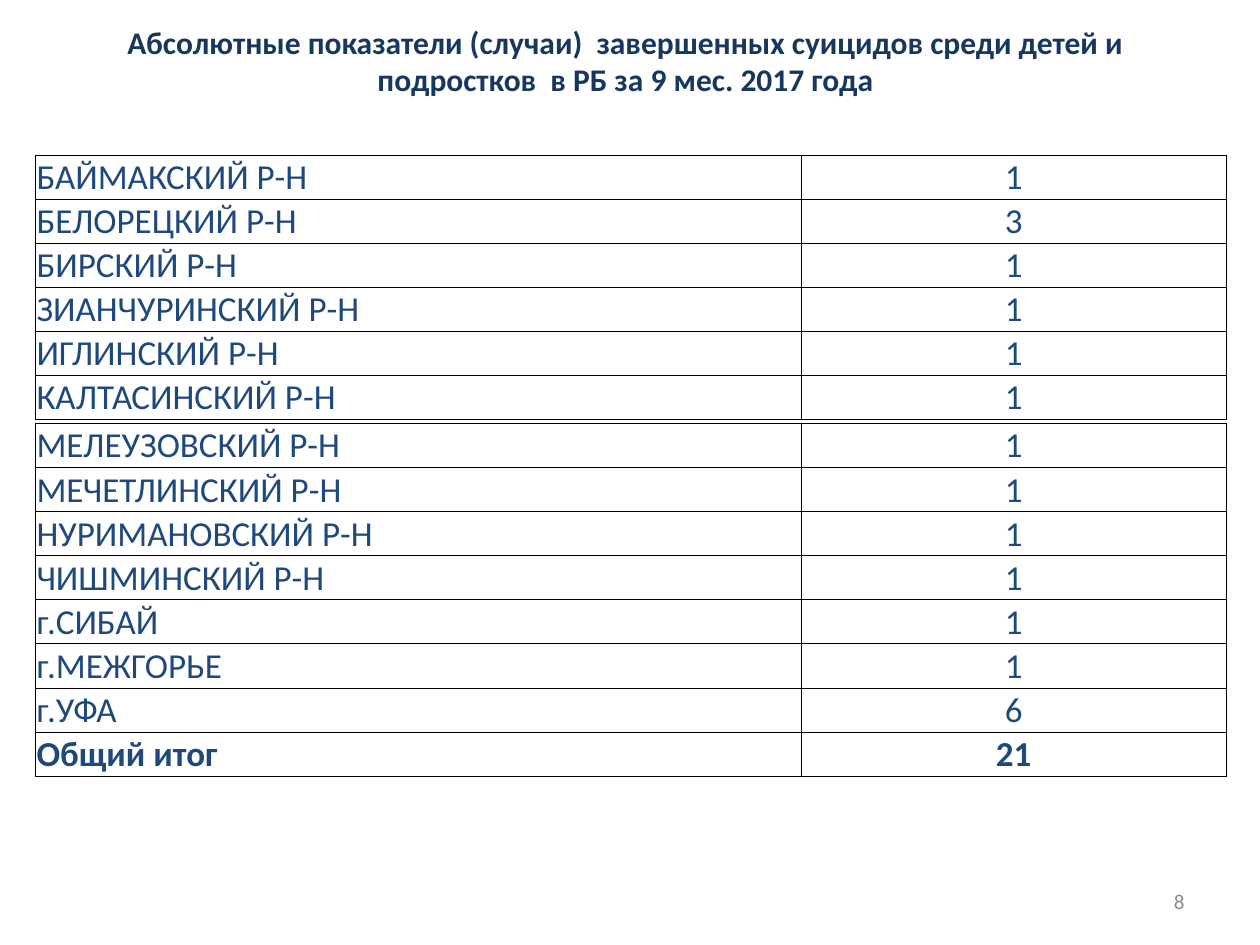
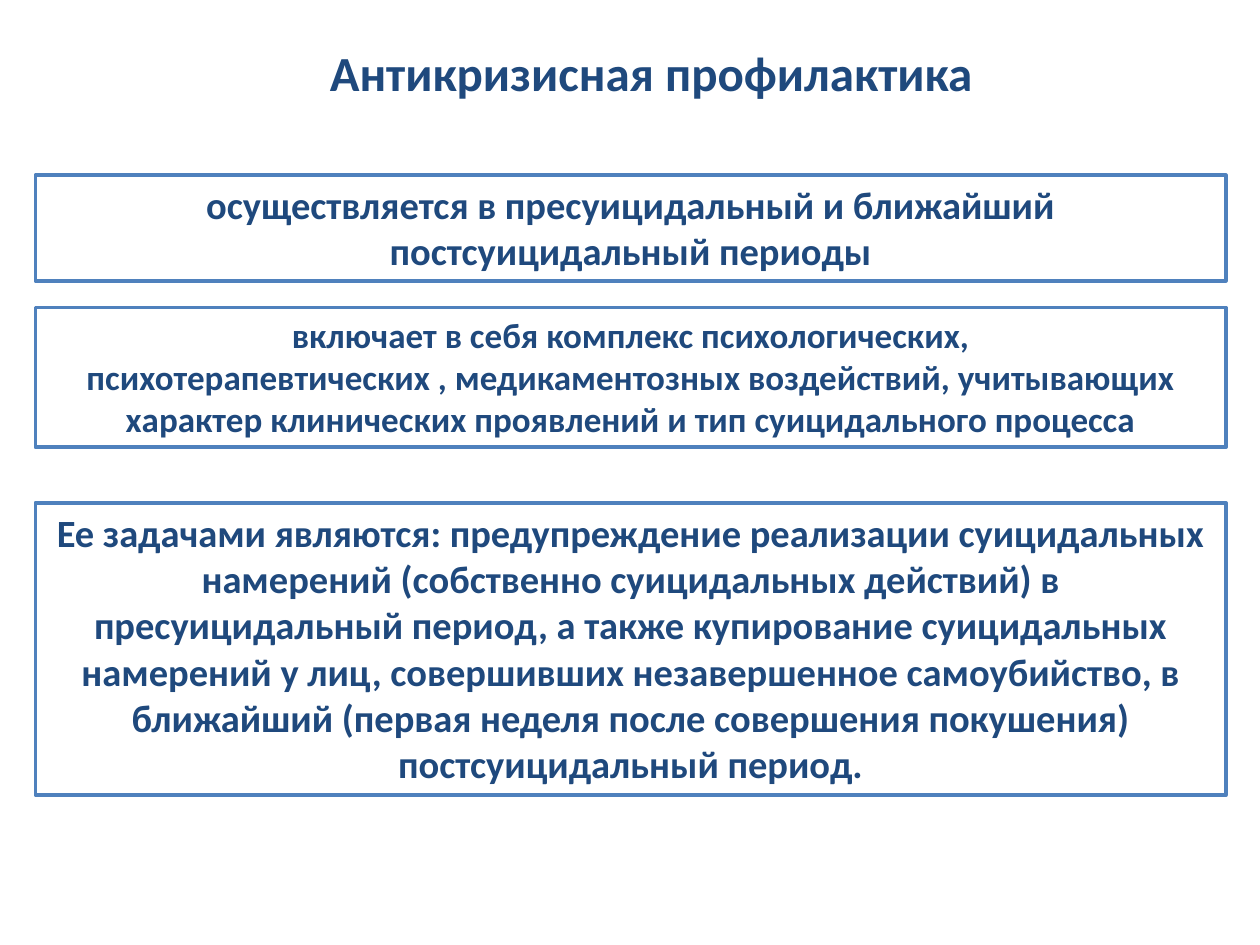
from lxml import etree
from pptx import Presentation
from pptx.dml.color import RGBColor
from pptx.enum.shapes import MSO_SHAPE
from pptx.enum.text import MSO_ANCHOR, PP_ALIGN
from pptx.oxml.ns import qn
from pptx.util import Inches, Pt

LEFT, CENTER, RIGHT = PP_ALIGN.LEFT, PP_ALIGN.CENTER, PP_ALIGN.RIGHT
TOP, MIDDLE, BOTTOM = MSO_ANCHOR.TOP, MSO_ANCHOR.MIDDLE, MSO_ANCHOR.BOTTOM
RECTANGLE = MSO_SHAPE.RECTANGLE

COLORS = {
    "text": "1F497D",
    "heading": "17375E",
    "number": "8C8C8C",
    "frame": "4F81BD",
    "border": "000000",
    "white": "FFFFFF",
}
CONTENT_LEFT, CONTENT_WIDTH = 0.28, 9.45
COLUMN_WIDTHS = [6.08, 3.37]
ROW_HEIGHT = 0.35


def write_text(text_frame, lines, size, color="text", bold=True, align=CENTER):
    text_frame.word_wrap = True
    for index, line in enumerate(lines):
        paragraph = text_frame.paragraphs[0] if index == 0 else text_frame.add_paragraph()
        paragraph.alignment = align
        run = paragraph.add_run()
        run.text = line
        font_format = {"name": "Calibri", "size": Pt(size), "bold": bold}
        for attribute, value in font_format.items():
            setattr(run.font, attribute, value)
        run.font.color.rgb = RGBColor.from_string(COLORS[color])


def add_text(slide, box, text, size, color="text", bold=True, align=CENTER, anchor=TOP):
    shape = slide.shapes.add_textbox(*map(Inches, box))
    shape.text_frame.vertical_anchor = anchor
    write_text(shape.text_frame, [text], size, color, bold, align)


presentation = Presentation()
presentation.slide_width = Inches(10)
presentation.slide_height = Inches(7.5)
blank_layout = presentation.slide_layouts[6]

cases_slide = presentation.slides.add_slide(blank_layout)
add_text(cases_slide, (7.17, 6.95, 2.33, 0.4), "8", 12, "number", False, RIGHT, MIDDLE)

case_tables = [
    (1.23, [
        ("БАЙМАКСКИЙ Р-Н", 1),
        ("БЕЛОРЕЦКИЙ Р-Н", 3),
        ("БИРСКИЙ Р-Н", 1),
        ("ЗИАНЧУРИНСКИЙ Р-Н", 1),
        ("ИГЛИНСКИЙ Р-Н", 1),
        ("КАЛТАСИНСКИЙ Р-Н", 1),
    ]),
    (3.36, [
        ("МЕЛЕУЗОВСКИЙ Р-Н", 1),
        ("МЕЧЕТЛИНСКИЙ Р-Н", 1),
        ("НУРИМАНОВСКИЙ Р-Н", 1),
        ("ЧИШМИНСКИЙ Р-Н", 1),
        ("г.СИБАЙ", 1),
        ("г.МЕЖГОРЬЕ", 1),
        ("г.УФА", 6),
        ("Общий итог", 21),
    ]),
]
cell_format = {
    "vertical_anchor": BOTTOM,
    "margin_left": Inches(0.01),
    "margin_right": Inches(0.01),
    "margin_top": Inches(0.01),
    "margin_bottom": 0,
}
for top, cases in case_tables:
    box = (CONTENT_LEFT, top, CONTENT_WIDTH, ROW_HEIGHT * len(cases))
    table = cases_slide.shapes.add_table(len(cases), 2, *map(Inches, box)).table
    table.first_row = False
    table.horz_banding = False
    for column, width in zip(table.columns, COLUMN_WIDTHS):
        column.width = Inches(width)
    for row_index, case in enumerate(cases):
        for column_index, (value, align) in enumerate(zip(case, (LEFT, CENTER))):
            cell = table.cell(row_index, column_index)
            for attribute, setting in cell_format.items():
                setattr(cell, attribute, setting)
            properties = cell._tc.get_or_add_tcPr()
            for side in ("a:lnL", "a:lnR", "a:lnT", "a:lnB"):
                border = etree.SubElement(properties, qn(side), w=str(Pt(0.5)))
                fill = etree.SubElement(border, qn("a:solidFill"))
                etree.SubElement(fill, qn("a:srgbClr"), val=COLORS["border"])
            cell.fill.background()
            is_total = case[0] == "Общий итог"
            write_text(cell.text_frame, [str(value)], 20, bold=is_total, align=align)

add_text(
    cases_slide, (CONTENT_LEFT, 0.13, 9.37, 0.71),
    "Абсолютные показатели (случаи)  завершенных суицидов среди детей и подростков  "
    "в РБ за 9 мес. 2017 года",
    18, "heading",
)

prevention_slide = presentation.slides.add_slide(blank_layout)
add_text(prevention_slide, (2.52, 0.29, 5.45, 0.57), "Антикризисная профилактика", 28, align=LEFT)

statements = [
    (1.39, 0.84, 22, ["осуществляется в пресуицидальный и ближайший постсуицидальный периоды"]),
    (2.44, 1.11, 20, [
        "включает в себя комплекс психологических,",
        "психотерапевтических , медикаментозных воздействий, учитывающих характер "
        "клинических проявлений и тип суицидального процесса",
    ]),
    (3.99, 2.32, 22, [
        "Ее задачами являются: предупреждение реализации суицидальных намерений "
        "(собственно суицидальных действий) в пресуицидальный период, а также купирование "
        "суицидальных намерений у лиц, совершивших незавершенное самоубийство, в ближайший "
        "(первая неделя после совершения покушения) постсуицидальный период.",
    ]),
]
for top, height, size, lines in statements:
    box = (CONTENT_LEFT, top, CONTENT_WIDTH, height)
    frame = prevention_slide.shapes.add_shape(RECTANGLE, *map(Inches, box))
    frame.shadow.inherit = False
    frame.fill.solid()
    frame.fill.fore_color.rgb = RGBColor.from_string(COLORS["white"])
    frame.line.color.rgb = RGBColor.from_string(COLORS["frame"])
    frame.line.width = Pt(2)
    frame.text_frame.vertical_anchor = TOP
    write_text(frame.text_frame, lines, size)

presentation.save("out.pptx")
